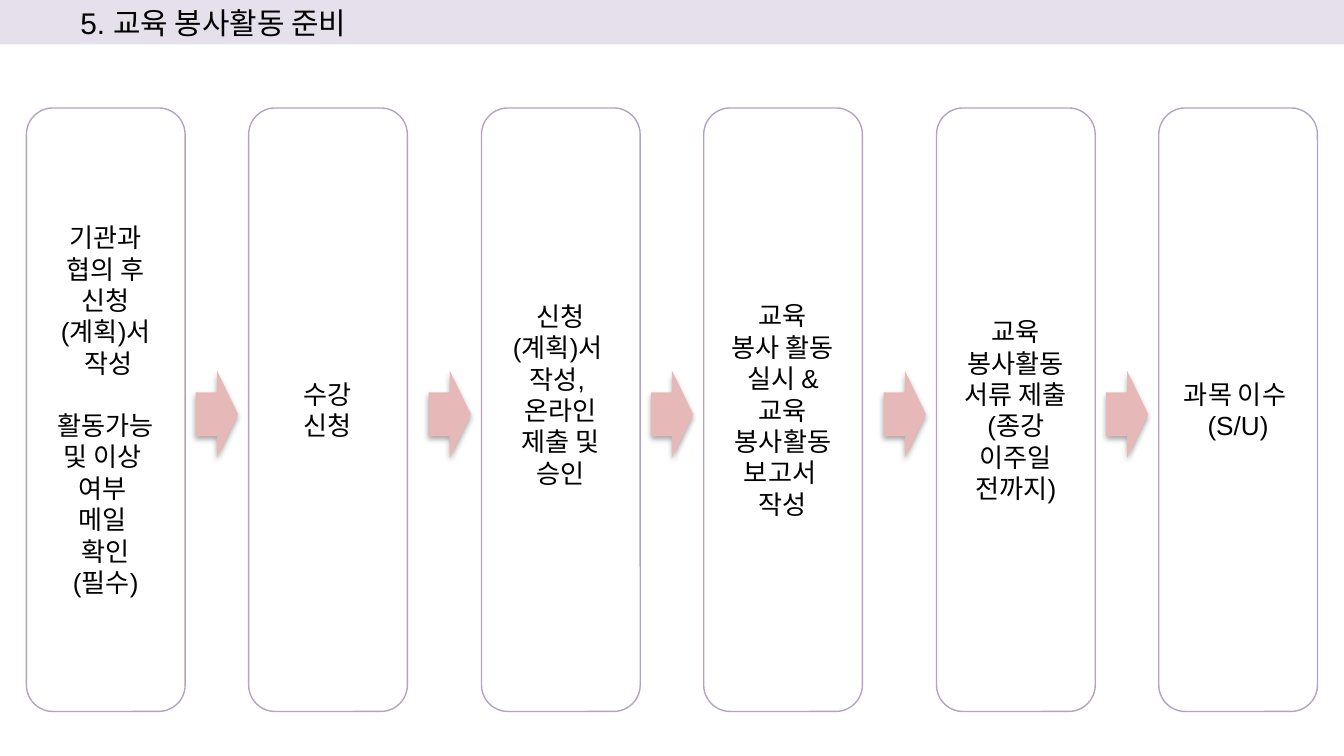
import pptx
import pptx.dml.color
import pptx.enum.shapes
import pptx.enum.text
import pptx.oxml
import pptx.oxml.ns
import pptx.util

Cm, Pt = pptx.util.Cm, pptx.util.Pt
RGB = pptx.dml.color.RGBColor
SHAPE = pptx.enum.shapes.MSO_SHAPE
ALIGN = pptx.enum.text.PP_ALIGN
MIDDLE = pptx.enum.text.MSO_ANCHOR.MIDDLE

BLACK = RGB(0x00, 0x00, 0x00)
BAND = RGB(0xE6, 0xE0, 0xEC)
OUTLINE = RGB(0xB3, 0xA2, 0xC7)
ARROW = RGB(0xE6, 0xB9, 0xB8)

WIDTH, HEIGHT = Cm(25.4), Cm(14.28)
LEFT, TOP = Cm(0.5), Cm(2.04)
BOX_W, BOX_H = Cm(3), Cm(11.4)
ARROW_W, ARROW_H = Cm(0.8), Cm(1.65)
STEPS = (Cm(4.2), Cm(4.4))  # the pitch alternates between these two
LINE = Pt(16.5)  # height of one text line

# One entry per box, one string per paragraph; \v is a line break.
STAGES = [
    ["기관과 협의 후 신청", "(계획)서\v 작성",
     "활동가능 및 이상 \v여부 \v메일 \v확인\v(필수)"],
    ["수강\v신청"],
    ["신청\v(계획)서 \v작성, ", "온라인 제출 및 승인"],
    ["교육\v봉사 활동 실시 &\v교육\v봉사활동 보고서 \v작성"],
    ["교육\v봉사활동 서류 제출\v(종강 이주일\v전까지)"],
    ["과목 이수 \v(S/U)"],
]

SHADOW = (
    f'<a:effectLst {pptx.oxml.ns.nsdecls("a")}>'
    '<a:outerShdw blurRad="39370" dist="22860" dir="5400000" rotWithShape="0">'
    '<a:srgbClr val="000000"><a:alpha val="35000"/></a:srgbClr>'
    '</a:outerShdw></a:effectLst>'
)


def apply_format(obj, values):
    for name, value in values.items():
        setattr(obj, name, value)


def write_text(tf, paragraphs, size, align):
    apply_format(tf, {"word_wrap": True, "vertical_anchor": MIDDLE})
    tf.text = "\n".join(paragraphs)
    for p in tf.paragraphs:
        p.alignment = align
        for r in p.runs:
            apply_format(r.font, {"name": "Arial", "size": Pt(size)})
            r.font.color.rgb = BLACK


def add_title(s, text):
    sp = s.shapes.title
    apply_format(sp, {"left": 0, "top": 0, "width": WIDTH, "height": Cm(0.84)})
    sp.fill.solid()
    sp.fill.fore_color.rgb = BAND
    tf = sp.text_frame
    write_text(tf, [text], 16, ALIGN.JUSTIFY)
    apply_format(tf, {"margin_left": Cm(1.52),
                      "auto_size": pptx.enum.text.MSO_AUTO_SIZE.NONE})


def add_stage(s, left, paragraphs):
    sp = s.shapes.add_shape(SHAPE.ROUNDED_RECTANGLE, left, TOP, BOX_W, BOX_H)
    sp.shadow.inherit = False
    sp.fill.background()
    sp.line.color.rgb = OUTLINE
    sp.line.width = Pt(0.75)
    write_text(sp.text_frame, paragraphs, 14, ALIGN.CENTER)
    return sp.text_frame


def add_arrow(s, left):
    sp = s.shapes.add_shape(SHAPE.RIGHT_ARROW, left, Cm(7), ARROW_W, ARROW_H)
    sp.fill.solid()
    sp.fill.fore_color.rgb = ARROW
    sp.line.fill.background()
    sp._element.spPr.append(pptx.oxml.parse_xml(SHADOW))


def main():
    prs = pptx.Presentation()
    apply_format(prs, {"slide_width": WIDTH, "slide_height": HEIGHT})
    s = prs.slides.add_slide(prs.slide_layouts[5])
    add_title(s, "5. 교육 봉사활동 준비")

    lefts = [LEFT + sum(STEPS[k % 2] for k in range(i))
             for i in range(len(STAGES))]
    frames = [add_stage(s, left, paragraphs)
              for left, paragraphs in zip(lefts, STAGES)]
    frames[0].paragraphs[2].space_before = LINE
    frames[2].margin_bottom += LINE
    for left in lefts[1:]:
        add_arrow(s, left - Cm(1))

    prs.save("out.pptx")


if __name__ == "__main__":
    main()
